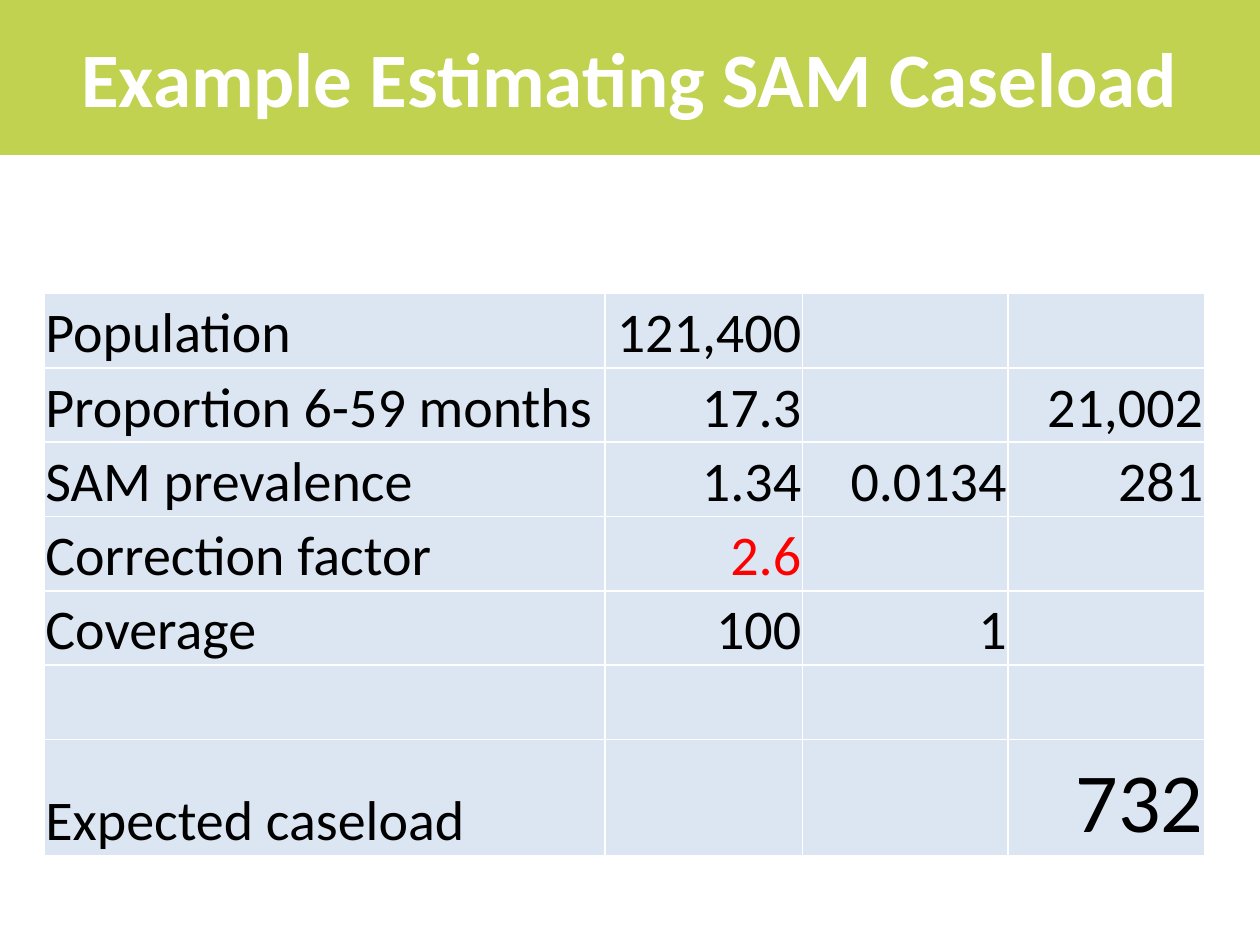
import pptx
import pptx.util
import pptx.dml.color
import pptx.enum.shapes
import pptx.enum.text
import pptx.oxml
import pptx.oxml.ns

Inches = pptx.util.Inches
Pt = pptx.util.Pt
ALIGN = pptx.enum.text.PP_ALIGN
ANCHOR = pptx.enum.text.MSO_ANCHOR

COLORS = {"band": "C1D150", "white": "FFFFFF", "cell": "DCE6F2",
          "text": "000000", "alert": "FF0000"}
ROWS = [
    ("Population", "121,400", "", ""),
    ("Proportion 6-59 months", "17.3", "", "21,002"),
    ("SAM prevalence", "1.34", "0.0134", "281"),
    ("Correction factor", "2.6", "", ""),
    ("Coverage", "100", "1", ""),
    ("", "", "", ""),
    ("Expected caseload", "", "", "732"),
]
COLUMN_WIDTHS = [4.45, 1.57, 1.63, 1.56]
ROW_HEIGHTS = [0.59] * 6 + [0.92]
SPECIAL_FORMATS = {(3, 1): {"color": "alert"}, (6, 3): {"size": 48}}


def rgb(name):
    """Return the deck colour with this name."""
    return pptx.dml.color.RGBColor.from_string(COLORS[name])


def set_attributes(target, values):
    """Set each attribute of the target from a dict."""
    for name, value in values.items():
        setattr(target, name, value)


def write_text(para, text, size, color="text", bold=False):
    """Add one formatted span to a paragraph."""
    span = para.add_run()
    span.text = text
    set_attributes(span.font, {"name": "Calibri", "size": Pt(size), "bold": bold})
    span.font.color.rgb = rgb(color)


def add_borders(cell, color, width):
    """Draw a solid line on all four sides of a cell."""
    properties = cell._tc.get_or_add_tcPr()
    for side in ("lnL", "lnR", "lnT", "lnB"):
        properties.append(pptx.oxml.parse_xml(
            f'<a:{side} {pptx.oxml.ns.nsdecls("a")} w="{Pt(width)}"><a:solidFill>'
            f'<a:srgbClr val="{COLORS[color]}"/></a:solidFill></a:{side}>'))


def add_title(page, box, text):
    """Place the title on a coloured band filling the box."""
    band = page.shapes.add_shape(pptx.enum.shapes.MSO_SHAPE.RECTANGLE, *box)
    band.shadow.inherit = False
    band.fill.solid()
    band.fill.fore_color.rgb = rgb("band")
    band.line.fill.background()
    title = page.shapes.title
    title._element.addprevious(band._element)
    set_attributes(title, dict(zip(("left", "top", "width", "height"), box)))
    set_attributes(title.text_frame, {"vertical_anchor": ANCHOR.MIDDLE, "word_wrap": True})
    para = title.text_frame.paragraphs[0]
    para.alignment = ALIGN.CENTER
    write_text(para, text, 44, "white", bold=True)


def format_cell(cell, text, alignment, special):
    """Fill, border and label one table cell."""
    add_borders(cell, "white", 1)
    cell.fill.solid()
    cell.fill.fore_color.rgb = rgb("cell")
    set_attributes(cell, {
        "vertical_anchor": ANCHOR.BOTTOM, "margin_left": Inches(0.01),
        "margin_right": Inches(0.01), "margin_top": Inches(0.01), "margin_bottom": 0})
    if text:
        para = cell.text_frame.paragraphs[0]
        para.alignment = alignment
        write_text(para, text, **{"size": 32, **special})


def add_caseload_table(page, box):
    """Place the caseload calculation table in the box."""
    table = page.shapes.add_table(len(ROWS), len(COLUMN_WIDTHS), *box).table
    set_attributes(table, {"first_row": False, "horz_banding": False})
    for column, width in zip(table.columns, COLUMN_WIDTHS):
        column.width = Inches(width)
    for row, height in zip(table.rows, ROW_HEIGHTS):
        row.height = Inches(height)
    for row_index, values in enumerate(ROWS):
        for column_index, text in enumerate(values):
            format_cell(table.cell(row_index, column_index), text,
                        ALIGN.RIGHT if column_index else ALIGN.LEFT,
                        SPECIAL_FORMATS.get((row_index, column_index), {}))


def main():
    """Build and save the deck."""
    deck = pptx.Presentation()
    set_attributes(deck, {"slide_width": Inches(10), "slide_height": Inches(7.5)})
    page = deck.slides.add_slide(deck.slide_layouts[5])
    add_title(page, (0, Inches(-0.02), Inches(10), Inches(1.25)),
              "Example Estimating SAM Caseload")
    add_caseload_table(page, (Inches(0.35), Inches(2.33),
                              Inches(sum(COLUMN_WIDTHS)), Inches(sum(ROW_HEIGHTS))))
    deck.save("out.pptx")


if __name__ == "__main__":
    main()
